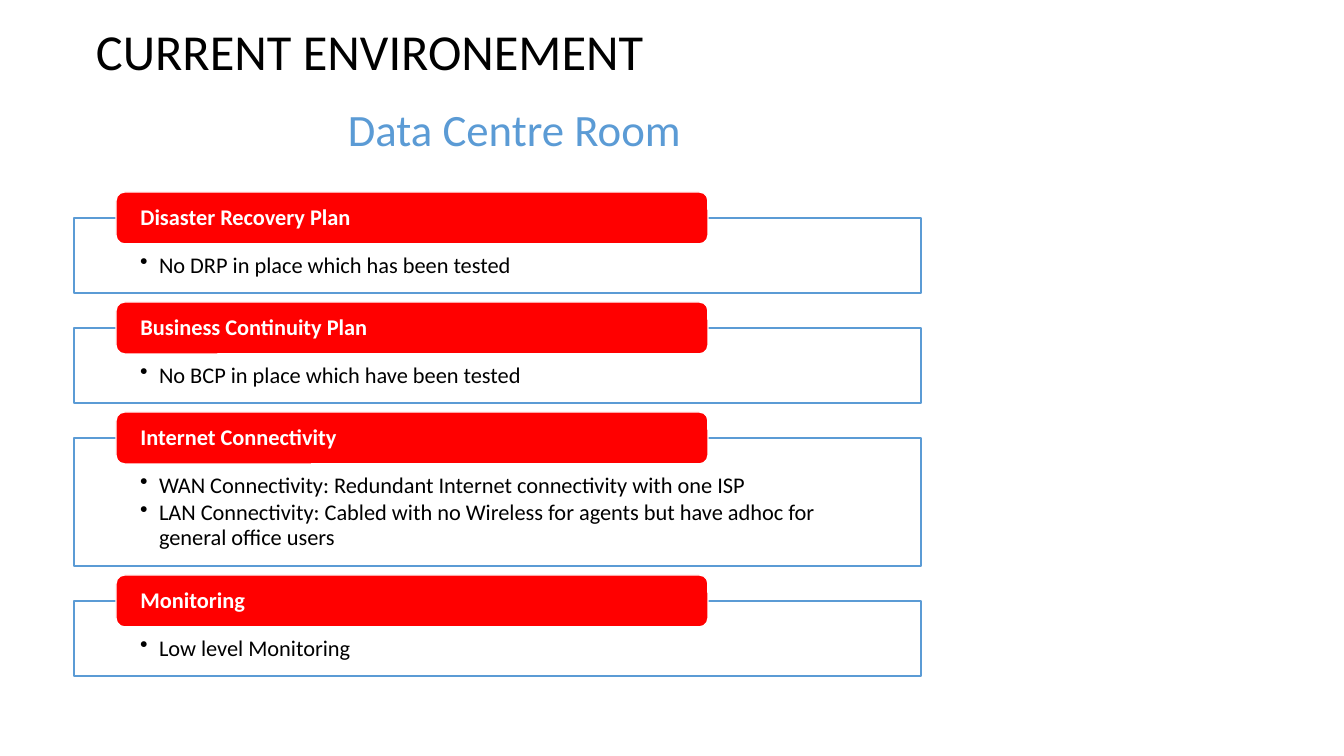
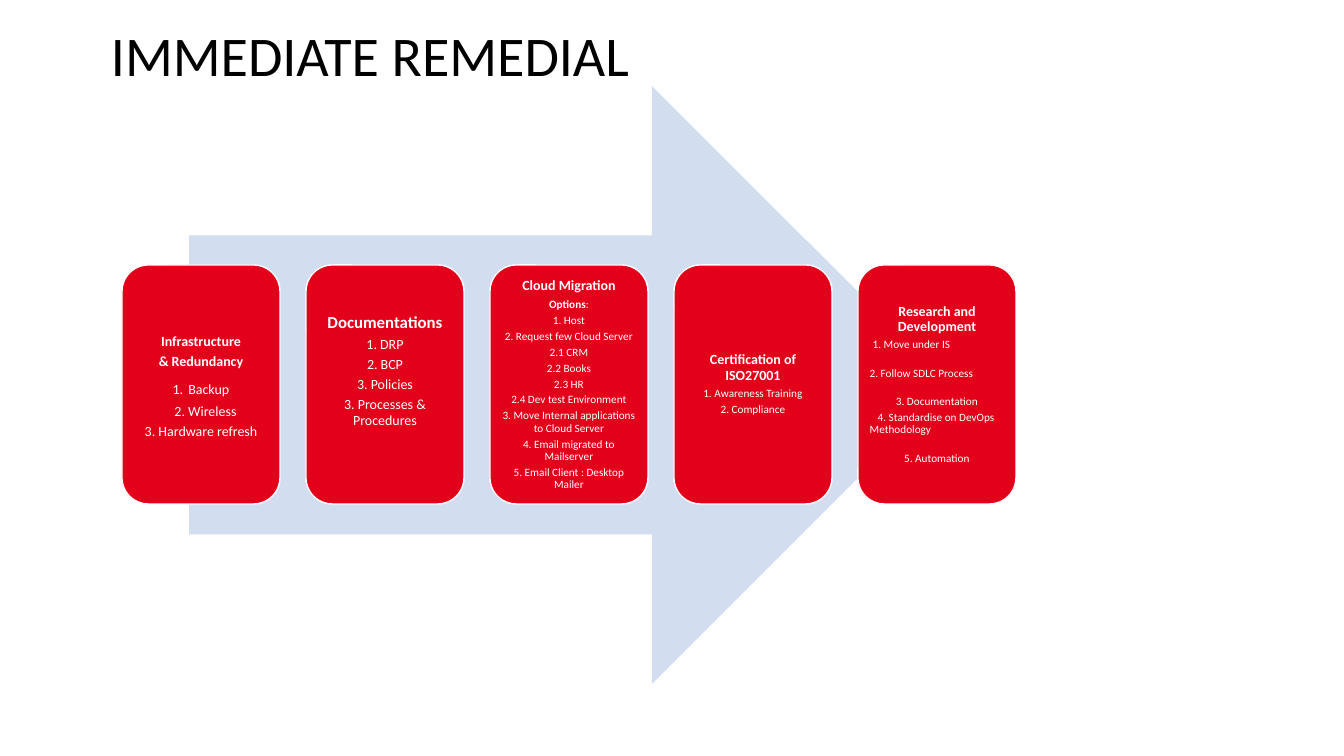
"""Builds two slides: the current environment and the immediate remedial steps."""
from dataclasses import dataclass

from lxml import etree
from pptx import Presentation
from pptx.dml.color import RGBColor
from pptx.enum.shapes import MSO_SHAPE
from pptx.enum.text import MSO_ANCHOR, PP_ALIGN
from pptx.oxml.ns import qn
from pptx.util import Pt

RECTANGLE, ROUNDED = MSO_SHAPE.RECTANGLE, MSO_SHAPE.ROUNDED_RECTANGLE
ARROW = MSO_SHAPE.RIGHT_ARROW
TOP, MIDDLE, BOTTOM = MSO_ANCHOR.TOP, MSO_ANCHOR.MIDDLE, MSO_ANCHOR.BOTTOM
LEFT, CENTER = PP_ALIGN.LEFT, PP_ALIGN.CENTER
EMU_PER_PX = 914400 / 100.8


@dataclass(frozen=True)
class Theme:
    font: str = "Calibri"
    black: str = "000000"
    white: str = "FFFFFF"
    blue: str = "5B9BD5"
    pale_blue: str = "D2DEEF"
    banner_red: str = "FF0000"
    card_red: str = "E2001A"
    subtitle: int = 32
    body: int = 16
    card_title: int = 10
    card_small: int = 8
    line_spacing: float = 0.9


THEME = Theme()


@dataclass
class Line:
    text: str
    size: int = THEME.card_small
    bold: bool = False
    color: str = THEME.white
    align: PP_ALIGN = CENTER
    indent: int = 0
    hanging: int = 0
    spacing: float = 0.35
    extra_after: int = 0
    tail: str = ""
    gap_size: int = 0


TITLES = [("CURRENT ENVIRONEMENT", 36, (86, 21, 1159, 65)),
          ("IMMEDIATE REMEDIAL", 40, (101, 29, 1159, 65))]
SUBTITLE = ("Data Centre Room", (336, 103, 357, 65))

SECTIONS = [
    ("Disaster Recovery Plan", 75, ["No DRP in place which has been tested"]),
    ("Business Continuity Plan", 75, ["No BCP in place which have been tested"]),
    ("Internet Connectivity", 128, [
        "WAN Connectivity: Redundant Internet connectivity with one ISP",
        "LAN Connectivity: Cabled with no Wireless for agents but have adhoc for general office users",
    ]),
    ("Monitoring", 75, ["Low level Monitoring"]),
]
FRAME_LEFT, FRAME_TOP, FRAME_WIDTH, FRAME_GAP = 74, 218, 847, 35
BANNER_LEFT, BANNER_WIDTH, BANNER_HEIGHT = 116, 592, 52


def heading(text, size=THEME.card_title):
    return Line(text, size, bold=True)


CARDS = [
    ((4, 9, 4, 4), [
        heading("Infrastructure"),
        heading("& Redundancy"),
        Line("1.", 10, tail="Backup", gap_size=16),
        Line("2. Wireless", 10, indent=9),
        Line("3. Hardware refresh", 10),
    ]),
    ((4, 4, 4, 31), [
        heading("Documentations", 12),
        *[Line(text, 10) for text in
          ("1. DRP", "2. BCP", "3. Policies", "3. Processes & Procedures")],
    ]),
    ((4, 4, 4, 4), [
        heading("Cloud Migration"),
        Line("Options", bold=True, tail=":"),
        *[Line(text) for text in
          ("1. Host", "2. Request few Cloud Server", "2.1 CRM", "2.2 Books", "2.3 HR",
           "2.4 Dev test Environment", "3. Move Internal applications to Cloud Server",
           "4. Email migrated to Mailserver", "5. Email Client : Desktop Mailer")],
    ]),
    ((4, 4, 4, 4), [
        heading("Certification of ISO27001"),
        Line("1. Awareness Training"),
        Line("2. Compliance"),
    ]),
    ((4, 4, 4, 4), [
        heading("Research and Development"),
        Line("1. Move under IS", align=LEFT, indent=3, extra_after=9),
        Line("2. Follow SDLC Process", align=LEFT, extra_after=9),
        Line("3. Documentation"),
        Line("4. Standardise on DevOps Methodology", align=LEFT, indent=8, extra_after=9),
        Line("5. Automation"),
    ]),
]
CARD_LEFT, CARD_TOP, CARD_WIDTH, CARD_HEIGHT, CARD_PITCH = 122, 265, 158, 239, 184
ARROW_BOX = (189, 86, 762, 598)


def px(length):
    return round(length * EMU_PER_PX)


def rgb(color):
    return RGBColor.from_string(color)


def write(box, lines, insets=(10, 5, 10, 5), anchor=TOP):
    frame = box.text_frame
    frame.word_wrap = True
    frame.vertical_anchor = anchor
    (frame.margin_left, frame.margin_top,
     frame.margin_right, frame.margin_bottom) = map(px, insets)
    for index, line in enumerate(lines):
        para = frame.add_paragraph() if index else frame.paragraphs[0]
        para.alignment = line.align
        para.line_spacing = THEME.line_spacing
        para.space_after = Pt(round(line.size * line.spacing + line.extra_after, 1))
        properties = para._p.get_or_add_pPr()
        properties.set("marL", str(px(line.hanging)))
        properties.set("indent", str(px(line.indent - line.hanging)))
        if line.hanging:
            etree.SubElement(properties, qn("a:buChar")).set("char", "•")
        font = para.font
        font.name, font.size, font.bold = THEME.font, Pt(line.size), line.bold
        font.color.rgb = rgb(line.color)
        para.add_run().text = line.text
        if line.gap_size:
            gap = para.add_run()
            gap.text = " "
            gap.font.size = Pt(line.gap_size)
        if line.tail:
            span = para.add_run()
            span.text = line.tail
            span.font.bold = False


def add_text(page, box, line, anchor=TOP):
    write(page.shapes.add_textbox(*map(px, box)), [line], anchor=anchor)


def add_block(page, kind, box, fill, outline=None):
    shape = page.shapes.add_shape(kind, *map(px, box))
    shape.shadow.inherit = False
    shape.fill.solid()
    shape.fill.fore_color.rgb = rgb(fill)
    if outline:
        shape.line.color.rgb = rgb(outline)
        shape.line.width = Pt(1)
    else:
        shape.line.fill.background()
    return shape


def add_page(deck, title):
    text, size, box = title
    page = deck.slides.add_slide(deck.slide_layouts[6])
    add_text(page, box, Line(text, size, color=THEME.black, align=LEFT, spacing=0), BOTTOM)
    return page


def build_environment(page):
    text, box = SUBTITLE
    add_text(page, box, Line(text, THEME.subtitle, color=THEME.blue, spacing=0))
    top = FRAME_TOP
    for name, height, points in SECTIONS:
        frame = add_block(page, RECTANGLE, (FRAME_LEFT, top, FRAME_WIDTH, height),
                          THEME.white, THEME.blue)
        write(frame, [Line(point, THEME.body, color=THEME.black, align=LEFT,
                           hanging=19, spacing=0.15) for point in points],
              insets=(66, 36, 66, 12))
        banner = add_block(page, ROUNDED,
                           (BANNER_LEFT, top - BANNER_HEIGHT // 2, BANNER_WIDTH, BANNER_HEIGHT),
                           THEME.banner_red, THEME.white)
        write(banner, [Line(name, THEME.body, bold=True, align=LEFT)],
              insets=(22, 0, 22, 0), anchor=MIDDLE)
        top += height + FRAME_GAP


def build_remedial(page):
    add_block(page, ARROW, ARROW_BOX, THEME.pale_blue)
    for index, (insets, lines) in enumerate(CARDS):
        card = add_block(page, ROUNDED,
                         (CARD_LEFT + index * CARD_PITCH, CARD_TOP, CARD_WIDTH, CARD_HEIGHT),
                         THEME.card_red, THEME.white)
        write(card, lines, insets, MIDDLE)


def main():
    deck = Presentation()
    deck.slide_width, deck.slide_height = px(1344), px(756)
    for title, build in zip(TITLES, (build_environment, build_remedial)):
        build(add_page(deck, title))
    deck.save("out.pptx")


if __name__ == "__main__":
    main()
